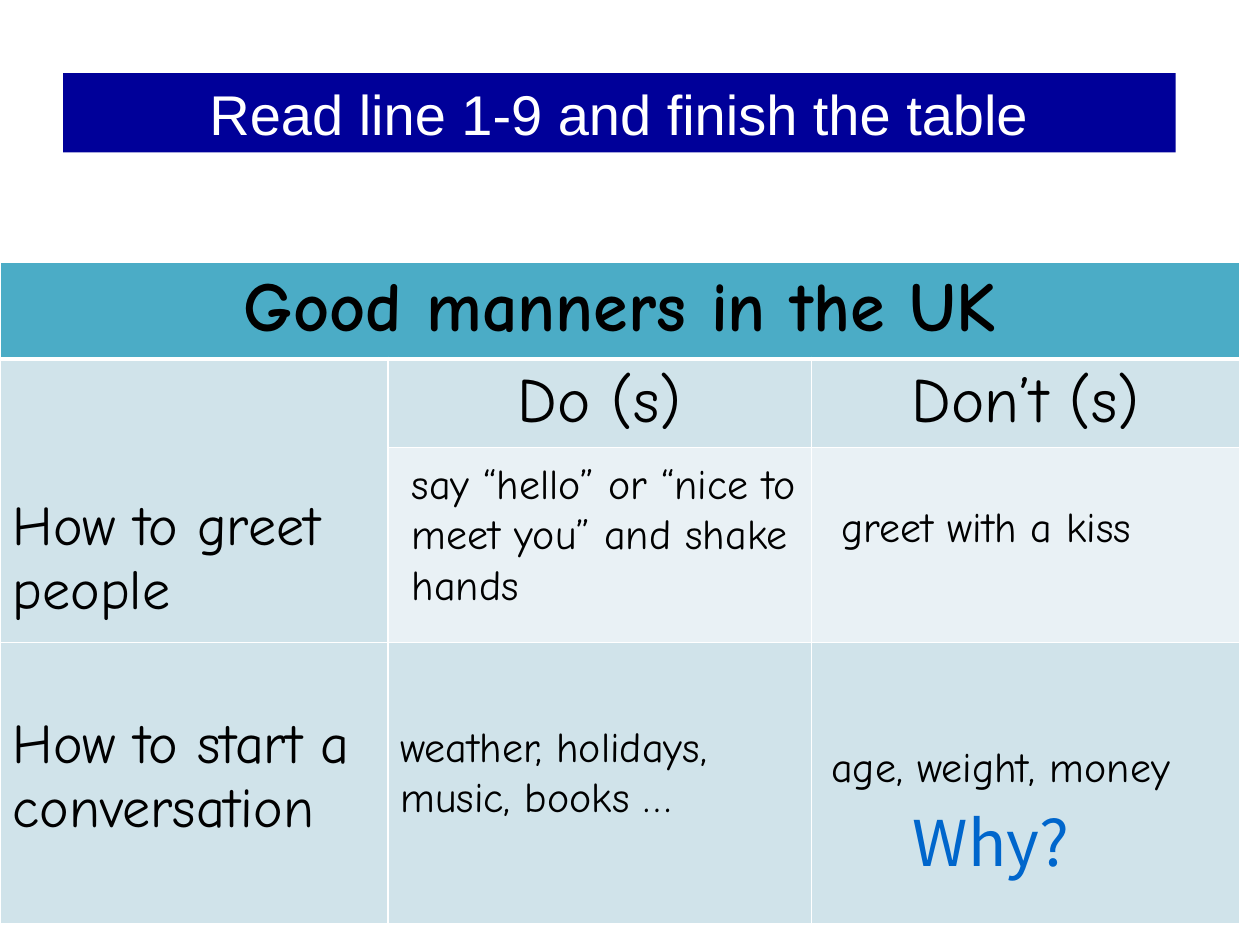
from dataclasses import dataclass

from lxml import etree
from pptx import Presentation
from pptx.dml.color import RGBColor
from pptx.enum.text import MSO_ANCHOR, PP_ALIGN
from pptx.oxml.ns import qn
from pptx.util import Inches, Pt

LEFT, CENTER = PP_ALIGN.LEFT, PP_ALIGN.CENTER
TOP, MIDDLE, BOTTOM = MSO_ANCHOR.TOP, MSO_ANCHOR.MIDDLE, MSO_ANCHOR.BOTTOM

WHITE = RGBColor(0xFF, 0xFF, 0xFF)
BLACK = RGBColor(0, 0, 0)
NAVY = RGBColor(0, 0, 0x99)
BLUE = RGBColor(0, 0x66, 0xCC)
TEAL = RGBColor(0x4B, 0xAC, 0xC6)
PALE = RGBColor(0xD0, 0xE3, 0xEA)
LIGHT = RGBColor(0xE9, 0xF1, 0xF5)

COMIC = "Comic Neue"
COLS = (3.08, 3.36, 3.4)
ROWS = (0.77, 0.7, 1.55, 2.23)
FILLS = (TEAL, PALE, LIGHT, PALE)


@dataclass
class Entry:
    """Text of one table cell."""
    row: int
    col: int
    text: str
    size: int
    align: int = CENTER
    bold: bool = False
    anchor: int = TOP
    top: float = 0.05
    foot: float = 0.05


@dataclass
class Note:
    """Free text laid over the table."""
    text: str
    left: float
    top: float
    width: float
    height: float
    size: int = 24
    face: str = COMIC
    color: RGBColor = BLACK
    align: int = LEFT
    wrap: bool = True


ENTRIES = (
    Entry(0, 0, "Good manners in the UK", 40, bold=True),
    Entry(1, 0, "How to greet people", 32, LEFT, anchor=BOTTOM, foot=0.15),
    Entry(1, 1, "Do (s)", 36),
    Entry(1, 2, "Don’t (s)", 36),
    Entry(3, 0, "How to start a conversation", 32, LEFT, top=0.56),
)

NOTES = (
    Note("say “hello” or “nice to meet you” and shake hands", 3.17, 3.58, 3.28, 1.77),
    Note("greet with a kiss", 6.58, 3.92, 2.93, 0.5),
    Note("weather, holidays, music, books …", 3.08, 5.67, 3.2, 0.9),
    Note("age, weight, money", 6.5, 5.83, 3.36, 0.5),
    Note("Why?", 7, 6.33, 1.73, 0.86, 36, "Noto Sans CJK SC", BLUE, CENTER, False),
)


def write(frame, text: str, align: int, color: RGBColor, **form) -> None:
    """Put one formatted paragraph in a text frame."""
    frame.text = text
    para = frame.paragraphs[0]
    para.alignment = align
    font = para.runs[0].font
    font.color.rgb = color
    for key, value in form.items():
        setattr(font, key, value)


def edge(cell, sides: dict) -> None:
    """Draw white cell borders, with a width in points for each side."""
    props = cell._tc.get_or_add_tcPr()
    for spot, (side, width) in enumerate(sides.items()):
        line = etree.Element(qn(f"a:ln{side}"), w=str(Pt(width)))
        fill = etree.SubElement(line, qn("a:solidFill"))
        etree.SubElement(fill, qn("a:srgbClr"), val=str(WHITE))
        props.insert(spot, line)


def draw_title(slide) -> None:
    title = slide.shapes.title
    place = {"left": 0.5, "top": 0.58, "width": 8.83, "height": 0.63}
    for key, value in place.items():
        setattr(title, key, Inches(value))
    title.fill.solid()
    title.fill.fore_color.rgb = NAVY
    frame = title.text_frame
    frame.vertical_anchor = MIDDLE
    write(frame, "Read line 1-9 and finish the table", CENTER, WHITE,
          size=Pt(32), name="Arial")


def draw_table(slide) -> None:
    table = slide.shapes.add_table(
        len(ROWS), len(COLS), 0, Inches(2.08),
        Inches(sum(COLS)), Inches(sum(ROWS))).table
    for col, width in zip(table.columns, COLS):
        col.width = Inches(width)
    for row, height in zip(table.rows, ROWS):
        row.height = Inches(height)

    # Fills and borders, with a thick rule under the heading
    for r, fill in enumerate(FILLS):
        for c in range(len(COLS)):
            cell = table.cell(r, c)
            cell.fill.solid()
            cell.fill.fore_color.rgb = fill
            edge(cell, {"L": 1, "R": 1, "T": 3 if r == 1 else 1,
                        "B": 3 if r == 0 else 1})

    # Merged heading and first label
    table.cell(0, 0).merge(table.cell(0, 2))
    table.cell(1, 0).merge(table.cell(2, 0))

    for item in ENTRIES:
        cell = table.cell(item.row, item.col)
        form = {"margin_top": Inches(item.top),
                "margin_bottom": Inches(item.foot),
                "vertical_anchor": item.anchor}
        for key, value in form.items():
            setattr(cell, key, value)
        write(cell.text_frame, item.text, item.align, BLACK,
              size=Pt(item.size), name=COMIC, bold=item.bold)


def draw_note(slide, note: Note) -> None:
    box = slide.shapes.add_textbox(
        *map(Inches, (note.left, note.top, note.width, note.height)))
    frame = box.text_frame
    frame.word_wrap = note.wrap
    write(frame, note.text, note.align, note.color,
          size=Pt(note.size), name=note.face)


def main() -> None:
    deck = Presentation()
    deck.slide_width, deck.slide_height = Inches(10), Inches(7.5)
    slide = deck.slides.add_slide(deck.slide_layouts[5])
    draw_title(slide)
    draw_table(slide)
    for note in NOTES:
        draw_note(slide, note)
    deck.save("out.pptx")


if __name__ == "__main__":
    main()
